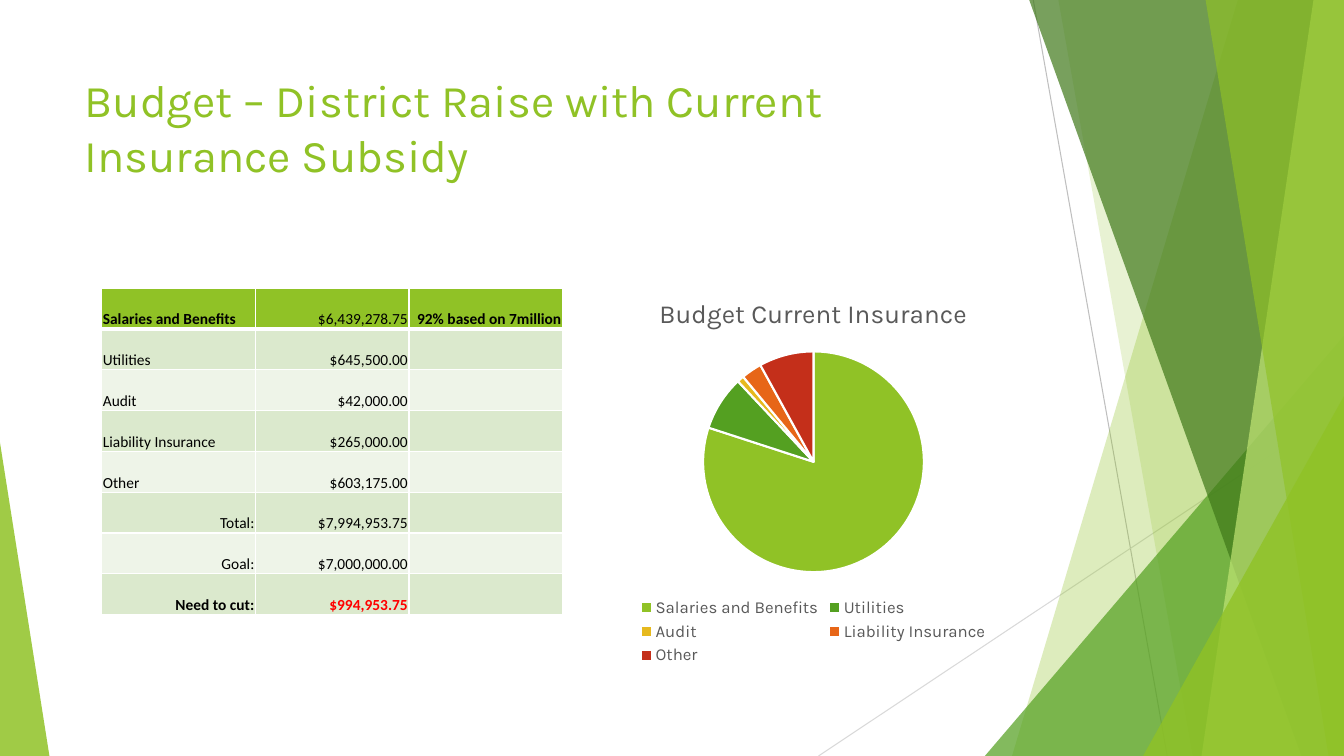
from lxml.etree import SubElement
from pptx import Presentation
from pptx.chart.data import CategoryChartData
from pptx.dml.color import RGBColor
from pptx.enum.chart import XL_CHART_TYPE, XL_LEGEND_POSITION
from pptx.enum.shapes import MSO_CONNECTOR, MSO_SHAPE
from pptx.enum.text import MSO_ANCHOR, PP_ALIGN
from pptx.oxml.ns import qn
from pptx.util import Inches, Pt

WIDTH, HEIGHT = Inches(13.33), Inches(7.5)
COL, ROW = WIDTH / 100, HEIGHT / 100  # a grid of 100 columns by 100 rows

LIME = RGBColor(0x90, 0xC2, 0x26)
GREEN = RGBColor(0x54, 0xA0, 0x21)
FOREST = RGBColor(0x3F, 0x78, 0x19)
PALE = RGBColor(0xC0, 0xE4, 0x74)
GOLD = RGBColor(0xE6, 0xB9, 0x1E)
ORANGE = RGBColor(0xE7, 0x66, 0x18)
BRICK = RGBColor(0xC4, 0x2F, 0x1A)
BAND = RGBColor(0xDB, 0xE9, 0xCD)
LIGHT = RGBColor(0xEE, 0xF4, 0xE8)
RED = RGBColor(0xFF, 0, 0)
BLACK = RGBColor(0, 0, 0)
WHITE = RGBColor(0xFF, 0xFF, 0xFF)
GREY = RGBColor(0x59, 0x59, 0x59)
SILVER = RGBColor(0xBF, 0xBF, 0xBF)
MIST = RGBColor(0xD9, 0xD9, 0xD9)

HEAD = "Budget – District Raise with Current Insurance Subsidy"
TITLE = "Budget Current Insurance"
COSTS = [
    ("Salaries and Benefits", "$6,439,278.75", "92% based on 7million"),
    ("Utilities", "$645,500.00", ""),
    ("Audit", "$42,000.00", ""),
    ("Liability Insurance", "$265,000.00", ""),
    ("Other", "$603,175.00", ""),
]
SUMS = [
    ("Total:", "$7,994,953.75", ""),
    ("Goal:", "$7,000,000.00", ""),
    ("Need to cut:", "$994,953.75", ""),
]
SHARES = (80, 8, 1, 3, 8)
SLICES = (LIME, GREEN, GOLD, ORANGE, BRICK)


def place(left, top, width, height):
    """Turn grid units into lengths."""
    return (round(left * COL), round(top * ROW),
            round(width * COL), round(height * ROW))


def style(font, name, size, color, bold=False):
    font.name, font.size, font.bold = name, Pt(size), bold
    font.color.rgb = color


def paint(shape, color, alpha):
    """Fill without outline or shadow; alpha is a percentage."""
    shape.shadow.inherit = False
    shape.line.fill.background()
    shape.fill.solid()
    shape.fill.fore_color.rgb = color
    tint = shape.fill._xPr.find(".//" + qn("a:srgbClr"))
    SubElement(tint, qn("a:alpha"), val=str(alpha * 1000))


def add_line(slide, start, end, color):
    line = slide.shapes.add_connector(
        MSO_CONNECTOR.STRAIGHT, *place(*start, *end))
    line.line.color.rgb = color
    line.line.width = Pt(0.75)
    SubElement(line._element.spPr, qn("a:effectLst"))


def add_shard(slide, top, base, color, alpha):
    """Full-height panel with a slanted left edge, flush with the right."""
    pen = slide.shapes.build_freeform(
        round(top * COL), 0, scale=1.0)
    pen.add_line_segments(
        [(WIDTH, 0), (WIDTH, HEIGHT), (round(base * COL), HEIGHT)], close=True)
    paint(pen.convert_to_shape(), color, alpha)


def add_wedge(slide, left, top, width, apex, color, alpha):
    """Triangle that stands on the slide's bottom edge."""
    wedge = slide.shapes.add_shape(
        MSO_SHAPE.ISOSCELES_TRIANGLE, *place(left, top, width, 100 - top))
    wedge.adjustments[0] = apex
    paint(wedge, color, alpha)


def add_decor(slide):
    add_line(slide, (76.88, 0), (86.85, 100), SILVER)
    add_line(slide, (100, 53.73), (60.9, 100), MIST)
    add_shard(slide, 92.1, 75.3, LIME, 30)
    add_shard(slide, 78.75, 88.73, LIME, 20)
    add_wedge(slide, 73.28, 44.4, 26.72, 1, GREEN, 72)
    add_shard(slide, 76.58, 96.83, FOREST, 70)
    add_shard(slide, 97.73, 89.4, PALE, 70)
    add_shard(slide, 89.7, 98.85, LIME, 65)
    add_wedge(slide, 85.05, 52.4, 14.95, 1, LIME, 80)
    add_wedge(slide, 0, 58.53, 3.68, 0, LIME, 85)


def add_title(slide):
    frame = slide.shapes.add_textbox(
        *place(5.55, 8.93, 70.5, 19.2)).text_frame
    frame.word_wrap = True
    frame.text = HEAD
    style(frame.paragraphs[0].runs[0].font, "Karla", 32.4, LIME)


def add_border(cell, base):
    """White rules of one point; base is the width of the bottom rule."""
    props = cell._tc.get_or_add_tcPr()
    for spot, (side, width) in enumerate(
            (("L", 1), ("R", 1), ("T", 1), ("B", base))):
        rule = SubElement(props, qn("a:ln" + side), w=str(Pt(width)))
        fill = SubElement(rule, qn("a:solidFill"))
        SubElement(fill, qn("a:srgbClr"), val=str(WHITE))
        props.insert(spot, rule)


def fill_cell(cell, text, fill, color, bold, right):
    cell.fill.solid()
    cell.fill.fore_color.rgb = fill
    cell.vertical_anchor = MSO_ANCHOR.BOTTOM
    cell.margin_left = cell.margin_right = cell.margin_top = Inches(0.01)
    cell.margin_bottom = 0
    cell.text = text
    para = cell.text_frame.paragraphs[0]
    para.alignment = PP_ALIGN.RIGHT if right else PP_ALIGN.LEFT
    for run in para.runs:
        style(run.font, "Calibri", 11, color, bold)


def add_budget(slide):
    rows = COSTS + SUMS
    last = len(rows) - 1
    table = slide.shapes.add_table(
        len(rows), 3, *place(7.58, 38.13, 34.28, 43.2)).table
    for i, texts in enumerate(rows):
        fill = LIME if i == 0 else BAND if i % 2 else LIGHT
        for j, text in enumerate(texts):
            cell = table.cell(i, j)
            color = RED if (i, j) == (last, 1) else BLACK
            bold = i == last or (i == 0 and j != 1)
            fill_cell(cell, text, fill, color, bold,
                      j > 0 or i >= len(COSTS))
            add_border(cell, 3 if i == 0 else 1)


def add_pie(slide):
    data = CategoryChartData()
    data.categories = [cost[0] for cost in COSTS]
    data.add_series(TITLE, SHARES)
    chart = slide.shapes.add_chart(
        XL_CHART_TYPE.PIE, *place(41.93, 36.8, 37.2, 51.73), data).chart
    style(chart.font, "Karla", 10, BLACK)
    chart.has_title = True
    frame = chart.chart_title.text_frame
    frame.text = TITLE
    style(frame.paragraphs[0].runs[0].font, "Karla", 18.6, GREY)
    chart.chart_title.include_in_layout = False
    chart.has_legend = True
    chart.legend.position = XL_LEGEND_POSITION.BOTTOM
    chart.legend.include_in_layout = False
    style(chart.legend.font, "Karla", 12, GREY)
    plot = chart.plots[0]
    plot.vary_by_categories = True
    for i, color in enumerate(SLICES):
        form = plot.series[0].points[i].format
        form.fill.solid()
        form.fill.fore_color.rgb = color
        form.line.color.rgb = WHITE
        form.line.width = Pt(1.5)


def main():
    deck = Presentation()
    deck.slide_width, deck.slide_height = WIDTH, HEIGHT
    slide = deck.slides.add_slide(deck.slide_layouts[6])
    add_decor(slide)
    add_title(slide)
    add_budget(slide)
    add_pie(slide)
    deck.save("out.pptx")


if __name__ == "__main__":
    main()
